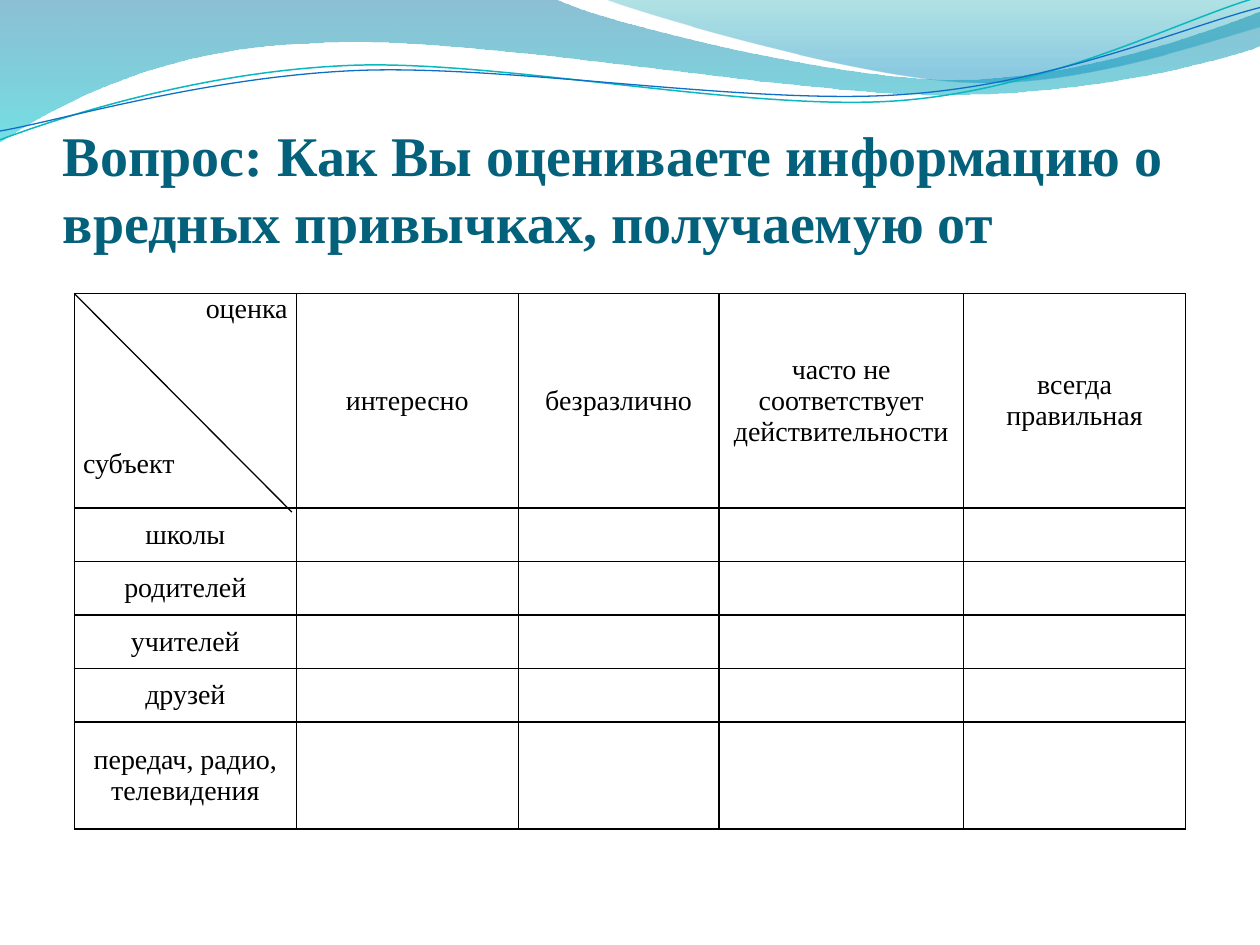
import dataclasses
import itertools

import lxml.etree
import pptx
import pptx.dml.color
import pptx.enum.shapes
import pptx.enum.text
import pptx.oxml.ns
import pptx.util

ALIGN = pptx.enum.text.PP_ALIGN
ANCHOR = pptx.enum.text.MSO_ANCHOR
qn = pptx.oxml.ns.qn


@dataclasses.dataclass(frozen=True)
class Theme:
    font: str = "Times New Roman"
    title_size: int = 32
    table_size: int = 16
    title: str = "04617B"
    ink: str = "000000"
    teal_line: str = "0AB8BF"
    blue_line: str = "0F6FC6"
    wide_wave: tuple = ((0, "0074A1", 45), (1, "00C6CF", 55))
    right_wave: tuple = ((0, "00A1A9", 30), (0.8, "008BBF", 45))


THEME = Theme()
GRID = 10
COLUMN_SHARES = (1.76, 1.76, 1.59, 1.94, 1.76)
ROW_SHARES = (4, 1, 1, 1, 1, 2)
RATINGS = ("интересно", "безразлично", "часто не соответствует действительности",
           "всегда правильная")
SUBJECTS = ("школы", "родителей", "учителей", "друзей", "передач, радио, телевидения")

WIDE_WAVE = ((0, 0), [
    (4.4, -0.01),
    (4.76, 0.17, 6.64, 0.63, 7.58, 0.63), (8.53, 0.63, 9.58, 0.26, 10, 0.09),
    (10.01, 0.36),
    (9.83, 0.44, 8.7, 0.76, 7.46, 0.75), (6.22, 0.75, 3.82, 0.28, 2.57, 0.34),
    (1.29, 0.36, 0.46, 0.83, -0.01, 1.13), (0, 0)])
RIGHT_WAVE = ((4.79, -0.01), [
    (5.09, 0.11, 6.82, 0.62, 7.69, 0.65), (8.56, 0.69, 9.61, 0.32, 10, 0.21),
    (10, 0), (4.79, -0.01)])
TEAL_CURVE = ((0, 1.11), [
    (0.48, 0.93, 1.58, 0.57, 2.77, 0.52), (3.95, 0.47, 5.93, 0.89, 7.13, 0.8),
    (8.33, 0.71, 9.38, 0.15, 9.98, -0.02)])
BLUE_CURVE = ((0, 1.04), [
    (0.47, 0.96, 1.64, 0.61, 2.83, 0.56), (4.03, 0.51, 5.97, 0.84, 7.17, 0.75),
    (8.36, 0.67, 9.41, 0.21, 10, 0.06)])


def rgb(color):
    """Return a colour object for a hex string."""
    return pptx.dml.color.RGBColor.from_string(color)


def bend(shape, segments):
    """Join each run of three control points into one cubic curve."""
    steps = iter(list(shape._element.iter(qn("a:lnTo"))))
    for segment in segments:
        first = next(steps)
        if len(segment) == 2:
            continue
        curve = lxml.etree.Element(qn("a:cubicBezTo"))
        first.addprevious(curve)
        for step in (first, next(steps), next(steps)):
            curve.append(step[0])
            step.getparent().remove(step)


def add_outline(slide, box, outline, close):
    """Draw an outline on a grid of square cells that spans the box width."""
    left, top, width, _ = box
    cell = width / GRID
    start, segments = outline
    numbers = list(itertools.chain(start, *segments))
    points = [(left + x * cell, top + y * cell)
              for x, y in zip(numbers[::2], numbers[1::2])]
    builder = slide.shapes.build_freeform(*points[0])
    builder.add_line_segments(points[1:], close=close)
    shape = builder.convert_to_shape()
    bend(shape, segments)
    shape.shadow.inherit = False
    return shape


def add_wave(slide, box, outline, stops):
    """Draw a wave with a translucent gradient running downwards."""
    wave = add_outline(slide, box, outline, True)
    wave.line.fill.background()
    wave.fill.gradient()
    wave.fill.gradient_angle = 270
    for stop, (position, color, _) in zip(wave.fill.gradient_stops, stops):
        stop.position = position
        stop.color.rgb = rgb(color)
    for tint, (_, _, opacity) in zip(wave._element.iter(qn("a:srgbClr")), stops):
        lxml.etree.SubElement(tint, qn("a:alpha"), val=str(opacity * 1000))


def add_header(slide, box):
    """Draw the waves and the two thin curves."""
    add_wave(slide, box, WIDE_WAVE, THEME.wide_wave)
    add_wave(slide, box, RIGHT_WAVE, THEME.right_wave)
    for outline, color, weight in ((TEAL_CURVE, THEME.teal_line, 0.85),
                                   (BLUE_CURVE, THEME.blue_line, 0.75)):
        curve = add_outline(slide, box, outline, False)
        curve.fill.background()
        curve.line.color.rgb = rgb(color)
        curve.line.width = pptx.util.Pt(weight)


def style(paragraph, size, color, align):
    """Set the font and alignment of a paragraph."""
    paragraph.alignment = align
    paragraph.font.name = THEME.font
    paragraph.font.size = pptx.util.Pt(size)
    paragraph.font.color.rgb = rgb(color)


def add_title(slide, box):
    """Write the question at the bottom of the box."""
    frame = slide.shapes.add_textbox(*box).text_frame
    frame.word_wrap = True
    frame.vertical_anchor = ANCHOR.BOTTOM
    frame.margin_left = frame.margin_right = frame.margin_bottom = 0
    question = frame.paragraphs[0]
    question.text = "Вопрос: Как Вы оцениваете информацию о вредных привычках, получаемую от"
    style(question, THEME.title_size, THEME.title, ALIGN.LEFT)
    question.font.bold = True


def format_cell(cell):
    """Clear the fill and give a cell thin borders and its margins."""
    cell.fill.background()
    cell.vertical_anchor = ANCHOR.MIDDLE
    cell.margin_left = cell.margin_right = pptx.util.Inches(0.07)
    cell.margin_top = cell.margin_bottom = 0
    properties = cell._tc.get_or_add_tcPr()
    for index, side in enumerate(("a:lnL", "a:lnR", "a:lnT", "a:lnB")):
        border = lxml.etree.Element(qn(side), w=str(pptx.util.Pt(1)))
        solid = lxml.etree.SubElement(border, qn("a:solidFill"))
        lxml.etree.SubElement(solid, qn("a:srgbClr"), val=THEME.ink)
        properties.insert(index, border)


def add_corner(slide, cell, box):
    """Label the corner cell on both sides of its diagonal."""
    cell.vertical_anchor = ANCHOR.TOP
    cell.text = "оценка\nсубъект"
    rating, subject = cell.text_frame.paragraphs
    style(rating, THEME.table_size, THEME.ink, ALIGN.RIGHT)
    style(subject, THEME.table_size, THEME.ink, ALIGN.LEFT)
    subject.space_before = pptx.util.Pt(71)
    left, top, width, height = box
    diagonal = slide.shapes.add_connector(
        pptx.enum.shapes.MSO_CONNECTOR.STRAIGHT,
        left + int(width * 0.98), top + int(height * 1.02), left, top)
    diagonal.line.color.rgb = rgb(THEME.ink)
    diagonal.line.width = pptx.util.Pt(0.75)
    lxml.etree.SubElement(diagonal._element.spPr, qn("a:effectLst"))


def add_survey(slide, box):
    """Fill the box with the table of subjects against ratings."""
    left, top, width, height = box
    table = slide.shapes.add_table(len(ROW_SHARES), len(COLUMN_SHARES), *box).table
    table.first_row = table.horz_banding = False
    for column, share in zip(table.columns, COLUMN_SHARES):
        column.width = int(width * share / sum(COLUMN_SHARES))
    for row, share in zip(table.rows, ROW_SHARES):
        row.height = int(height * share / sum(ROW_SHARES))
    labels = {(0, i): text for i, text in enumerate(RATINGS, 1)}
    labels.update({(i, 0): text for i, text in enumerate(SUBJECTS, 1)})
    for place in itertools.product(range(len(ROW_SHARES)), range(len(COLUMN_SHARES))):
        cell = table.cell(*place)
        format_cell(cell)
        cell.text = labels.get(place, "")
        style(cell.text_frame.paragraphs[0], THEME.table_size, THEME.ink, ALIGN.CENTER)
    add_corner(slide, table.cell(0, 0),
               (left, top, table.columns[0].width, table.rows[0].height))


def main():
    """Build the survey slide."""
    deck = pptx.Presentation()
    deck.slide_width = pptx.util.Inches(10)
    deck.slide_height = pptx.util.Inches(7.5)
    slide = deck.slides.add_slide(deck.slide_layouts[6])

    def region(x, y, w, h):
        """Turn percentages of the slide into a box."""
        return (int(deck.slide_width * x / 100), int(deck.slide_height * y / 100),
                int(deck.slide_width * w / 100), int(deck.slide_height * h / 100))

    add_header(slide, region(0, 0, 100, 15))
    add_title(slide, region(5, 10.27, 90, 16.67))
    add_survey(slide, region(5.9, 31.07, 88.2, 56.67))
    deck.save("out.pptx")


if __name__ == "__main__":
    main()
